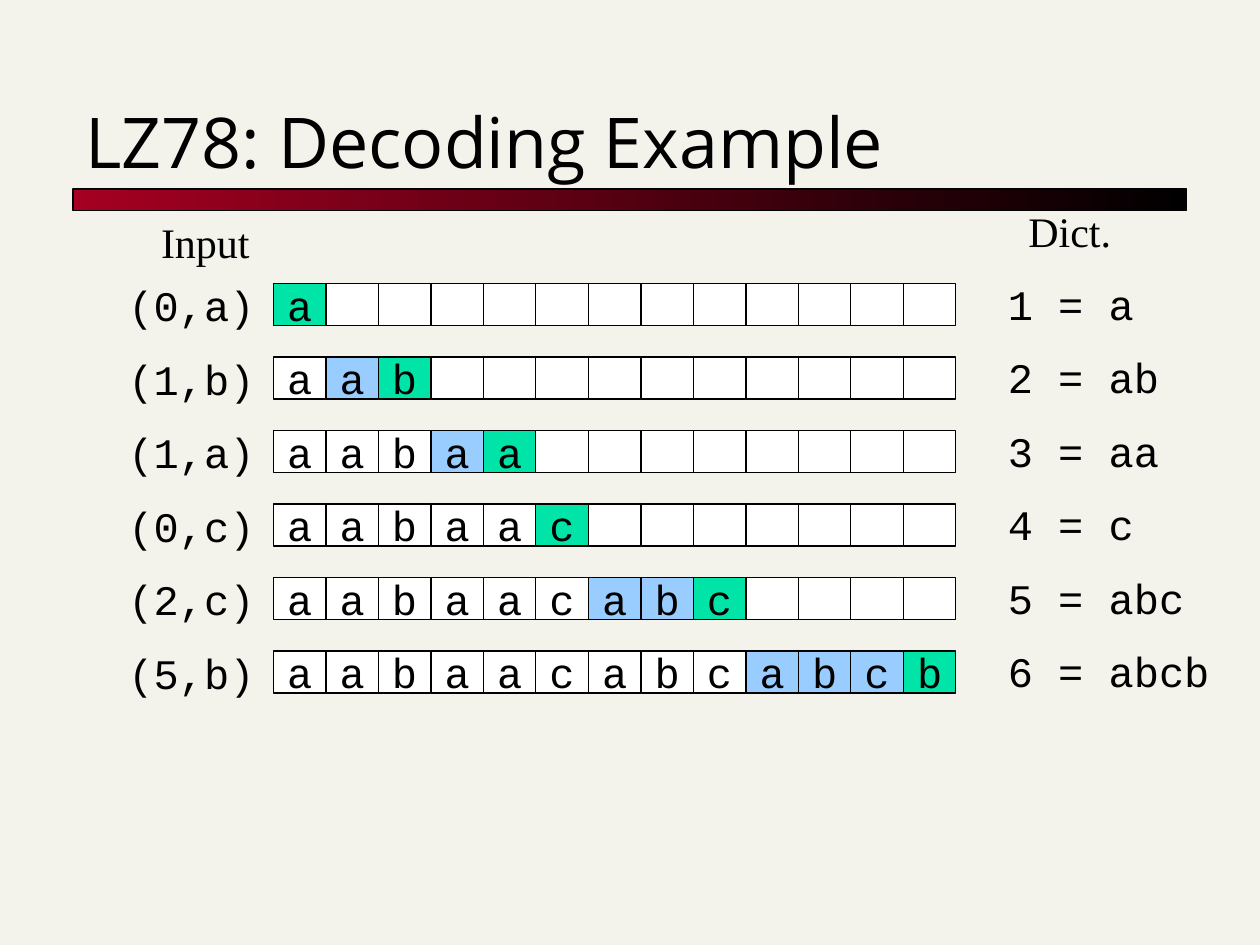
"""Build the LZ78 decoding example slide."""
from pptx import Presentation
from pptx import util as u
from pptx.dml.color import RGBColor
from pptx.enum import shapes, text

COLORS = {
    "background": "F4F3EB",
    "ink": "000000",
    "bar": "A50021",
    "plain": "FFFFFF",
    "match": "99CCFF",
    "new": "00E4A8",
}
TOKENS = [(0, "a"), (1, "b"), (1, "a"), (0, "c"), (2, "c"), (5, "b")]
CELL_COUNT = 13
CELL_LEFT, CELL_TOP = 2.17, 2.25
CELL_WIDTH, CELL_HEIGHT = 5 / 12, 1 / 3
ROW_STEP = 7 / 12
CODE = {"name": "Courier New", "size": u.Pt(24)}
HEADING = {"name": "Times New Roman", "size": u.Pt(24)}
TITLE = {"name": "Open Sans", "size": u.Pt(40)}
CENTER, LEFT = text.PP_ALIGN.CENTER, text.PP_ALIGN.LEFT


def color(name):
    return RGBColor.from_string(COLORS[name])


def write(shape, content, font, align, frame_format):
    frame = shape.text_frame
    for name, value in frame_format.items():
        setattr(frame, name, value)
    paragraph = frame.paragraphs[0]
    paragraph.alignment = align
    run = paragraph.add_run()
    run.text = content
    for name, value in font.items():
        setattr(run.font, name, value)
    run.font.color.rgb = color("ink")


def add_box(parent, left, top, width, height):
    shape = parent.add_shape(
        shapes.MSO_SHAPE.RECTANGLE,
        u.Inches(left), u.Inches(top), u.Inches(width), u.Inches(height))
    shape.shadow.inherit = False
    shape.line.color.rgb = color("ink")
    shape.line.width = u.Pt(0.75)
    return shape


def add_bar(parent):
    fill = add_box(parent, 0.58, 1.5, 8.84, 0.17).fill
    fill.gradient()
    fill.gradient_angle = 0
    for stop, name, position in zip(fill.gradient_stops, ("bar", "ink"), (0, 1)):
        stop.color.rgb = color(name)
        stop.position = position


def add_cell(parent, column, top, letter, fill):
    cell = add_box(parent, CELL_LEFT + column * CELL_WIDTH, top, CELL_WIDTH, CELL_HEIGHT)
    cell.fill.solid()
    cell.fill.fore_color.rgb = color(fill)
    if letter:
        write(cell, letter, CODE, CENTER,
              {"word_wrap": False, "vertical_anchor": text.MSO_ANCHOR.MIDDLE})


def add_label(parent, content, left, top, width, font, align):
    label = parent.add_textbox(
        u.Inches(left), u.Inches(top), u.Inches(width), u.Inches(0.5))
    write(label, content, font, align,
          {"word_wrap": False, "auto_size": text.MSO_AUTO_SIZE.SHAPE_TO_FIT_TEXT})


def add_title(parent, content):
    title = parent.add_textbox(
        u.Inches(0.58), u.Inches(0.42), u.Inches(8.83), u.Inches(1.08))
    write(title, content, TITLE, LEFT,
          {"word_wrap": True, "vertical_anchor": text.MSO_ANCHOR.BOTTOM})


def add_step(parent, number, token, before, entry):
    group = parent.add_group_shape().shapes
    top = CELL_TOP + (number - 1) * ROW_STEP
    decoded = before + entry
    fills = ["plain"] * len(before) + ["match"] * (len(entry) - 1) + ["new"]
    for column in range(CELL_COUNT):
        if column < len(decoded):
            add_cell(group, column, top, decoded[column], fills[column])
        else:
            add_cell(group, column, top, "", "plain")
    index, letter = token
    definition = f"{number} = {entry}"
    add_label(group, f"({index},{letter})", 0.92, top - 0.08, 1.2, CODE, CENTER)
    add_label(group, definition, 7.9, top - 0.09, 0.2 + 0.2 * len(definition), CODE, LEFT)


def main():
    presentation = Presentation()
    presentation.slide_width, presentation.slide_height = u.Inches(10), u.Inches(7.5)
    slide = presentation.slides.add_slide(presentation.slide_layouts[6])
    slide.background.fill.solid()
    slide.background.fill.fore_color.rgb = color("background")
    add_bar(slide.shapes)
    add_title(slide.shapes, "LZ78: Decoding Example")

    dictionary, decoded = [""], ""
    for number, token in enumerate(TOKENS, 1):
        entry = dictionary[token[0]] + token[1]
        add_step(slide.shapes, number, token, decoded, entry)
        dictionary.append(entry)
        decoded += entry

    add_label(slide.shapes, "Input", 1.16, 1.67, 0.94, HEADING, CENTER)
    add_label(slide.shapes, "Dict.", 8.05, 1.58, 0.88, HEADING, CENTER)
    presentation.save("out.pptx")


if __name__ == "__main__":
    main()
